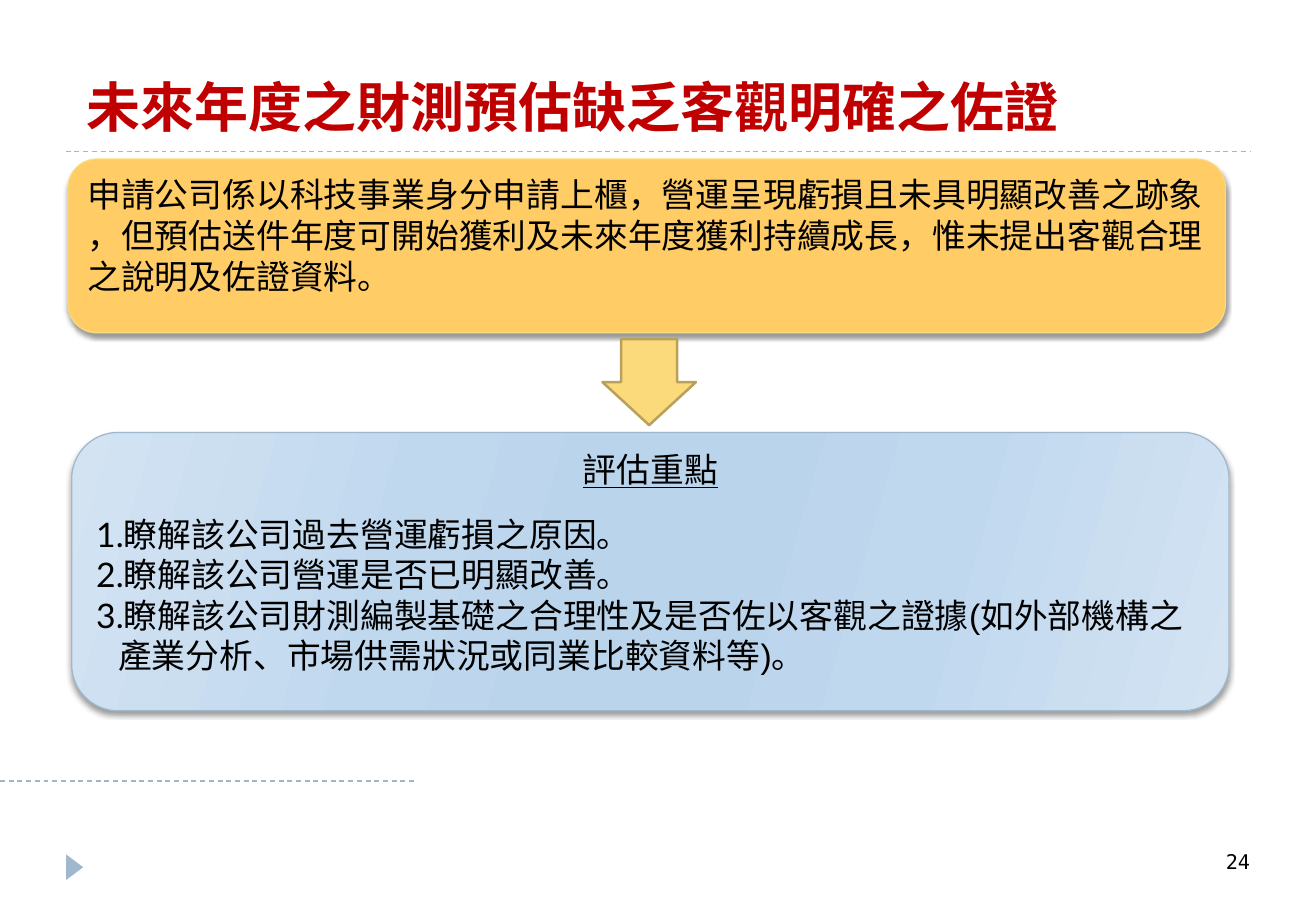
"""Build the slide on forecasts that lack objective evidence."""
from lxml.etree import SubElement as Sub, Element
from pptx import Presentation
from pptx.dml.color import RGBColor
from pptx.enum.dml import MSO_LINE as Dash
from pptx.enum.shapes import MSO_CONNECTOR as Conn, MSO_SHAPE as Kind
from pptx.enum.text import MSO_ANCHOR as Anchor, MSO_AUTO_SIZE as Fit, PP_ALIGN as Align
from pptx.oxml.ns import qn
from pptx.util import Pt

RED = RGBColor(0xC0, 0x00, 0x00)
BLACK = RGBColor(0x00, 0x00, 0x00)
STEEL = RGBColor(0x9F, 0xB8, 0xCD)
AMBER = RGBColor(0xFF, 0xCC, 0x66)
SAND = RGBColor(0xFA, 0xDA, 0x7A)
OLIVE = RGBColor(0xB9, 0xA1, 0x5A)
PALE = RGBColor(0xD3, 0xE3, 0xF2)
SOFT = RGBColor(0xC0, 0xD8, 0xEE)
SKY = RGBColor(0xBA, 0xD4, 0xEC)
BLEND = [(0, PALE), (30, SOFT), (45, SKY), (55, SKY), (73, SOFT), (100, PALE)]
HAN = "Noto Sans CJK SC"
LATIN = "Lato"
BREAK = "\v"

CASE = ["申請公司係以科技事業身分申請上櫃，營運呈現虧損且未具明顯改善之跡象", BREAK,
        "，但預估送件年度可開始獲利及未來年度獲利持續成長，惟未提出客觀合理", BREAK,
        "之說明及佐證資料。"]
POINTS = [["1.瞭解該公司過去營運虧損之原因。"],
          ["2.瞭解該公司營運是否已明顯改善。"],
          ["3.瞭解該公司財測編製基礎之合理性及是否佐以客觀之證據", "(", "如外部機構之", BREAK,
           "產業分析、市場供需狀況或同業比較資料等", ")", "。"]]


class Deck:
    """Hold the style and the current slide."""

    def __init__(self, wide, high):
        self.show = Presentation()
        self.show.slide_width, self.show.slide_height = Pt(wide), Pt(high)
        self.slide = self.show.slides.add_slide(self.show.slide_layouts[1])

    def place(self, item, box):
        item.left, item.top, item.width, item.height = map(Pt, box)

    def text(self, para, bits, size=20, face=LATIN, color=BLACK, bold=False,
             line=False, align=Align.LEFT, pitch=None):
        for bit in bits:
            if bit == BREAK:
                para.add_line_break()
                continue
            run = para.add_run()
            run.text = bit
            if bit in ("(", ")"):
                run.font.name = "Arial"
        para.alignment = align
        para.space_before = Pt(0)
        if pitch:
            para.line_spacing = Pt(pitch)
        font = para.font
        font.size, font.name, font.bold, font.underline = Pt(size), face, bold, line
        font.color.rgb = color
        Sub(font._rPr, qn("a:ea"), typeface=HAN)

    def title(self, text, box):
        item = self.slide.shapes.title
        self.place(item, box)
        item.text_frame.vertical_anchor = Anchor.MIDDLE
        self.text(item.text_frame.paragraphs[0], [text], 32, "TeX Gyre Bonum", RED, True)

    def points(self, rows, box, hang):
        item = self.slide.placeholders[1]
        self.place(item, box)
        frame = item.text_frame
        frame.auto_size = Fit.NONE
        frame.margin_left = frame.margin_top = frame.margin_right = frame.margin_bottom = 0
        for num, bits in enumerate(rows):
            para = frame.add_paragraph() if num else frame.paragraphs[0]
            self.text(para, bits, pitch=24)
            props = para._p.get_or_add_pPr()
            props.set("marL", str(Pt(hang)))
            props.set("indent", str(-Pt(hang)))
            props.find(qn("a:defRPr")).addprevious(Element(qn("a:buNone")))

    def shape(self, kind, box, fill, edge=None, width=0.75, turn=0):
        item = self.slide.shapes.add_shape(kind, *map(Pt, box))
        item.shadow.inherit = False
        item.rotation = turn
        item.fill.solid()
        item.fill.fore_color.rgb = fill
        if edge is None:
            item.line.fill.background()
        else:
            item.line.color.rgb = edge
            item.line.width = Pt(width)
        return item

    def panel(self, box, fill, edge, bits, **style):
        item = self.shape(Kind.ROUNDED_RECTANGLE, box, fill, edge)
        glow = item._element.spPr.find(qn("a:effectLst"))
        cast = Sub(glow, qn("a:outerShdw"), blurRad=str(Pt(3)), dist=str(Pt(2)),
                   dir="5400000", rotWithShape="0")
        Sub(Sub(cast, qn("a:srgbClr"), val=str(BLACK)), qn("a:alpha"), val="40000")
        frame = item.text_frame
        frame.word_wrap = True
        frame.vertical_anchor = Anchor.TOP
        frame.margin_left = frame.margin_right = Pt(6.5)
        self.text(frame.paragraphs[0], bits, **style)
        return item

    def blend(self, item, stops, angle):
        item.fill.gradient()
        grad = item._element.spPr.find(qn("a:gradFill"))
        for child in list(grad):
            grad.remove(child)
        chain = Sub(grad, qn("a:gsLst"))
        for pos, color in stops:
            stop = Sub(chain, qn("a:gs"), pos=str(pos * 1000))
            Sub(stop, qn("a:srgbClr"), val=str(color))
        Sub(grad, qn("a:lin"), ang=str(angle * 60000), scaled="0")

    def rule(self, left, right, top):
        item = self.slide.shapes.add_connector(
            Conn.STRAIGHT, Pt(left), Pt(top), Pt(right), Pt(top))
        item.line.color.rgb = STEEL
        item.line.width = Pt(0.75)
        item.line.dash_style = Dash.DASH
        Sub(item._element.spPr, qn("a:effectLst"))

    def label(self, text, box):
        frame = self.slide.shapes.add_textbox(*map(Pt, box)).text_frame
        frame.word_wrap = True
        self.text(frame.paragraphs[0], [text], 12, "DejaVu Sans Mono", align=Align.RIGHT)

    def front(self, item):
        self.slide.shapes._spTree.append(item._element)


def main():
    deck = Deck(780, 540)
    deck.rule(0, 247, 463)
    deck.rule(39, 741, 90)
    deck.shape(Kind.ISOSCELES_TRIANGLE, (36.7, 509, 15.1, 10.1), STEEL, turn=90)
    deck.title("未來年度之財測預估缺乏客觀明確之佐證", (44, 31.7, 704, 62.6))
    deck.panel((40.3, 94.3, 686, 103), AMBER, SAND, CASE, face=HAN, pitch=24.3)
    focus = deck.panel((42.5, 256.3, 686, 165), SKY, STEEL, ["評估重點"],
                       line=True, align=Align.CENTER, pitch=22)
    deck.blend(focus, BLEND, 16)
    deck.points(POINTS, (57, 304.5, 665, 100), 13)
    deck.front(deck.slide.placeholders[1])
    arrow = deck.shape(Kind.DOWN_ARROW, (357.1, 201, 55.4, 51), SAND, OLIVE, 1.5)
    arrow.adjustments[0] = 0.6
    deck.label("24", (644.4, 499.7, 103.7, 28.8))
    deck.show.save("out.pptx")


if __name__ == "__main__":
    main()
